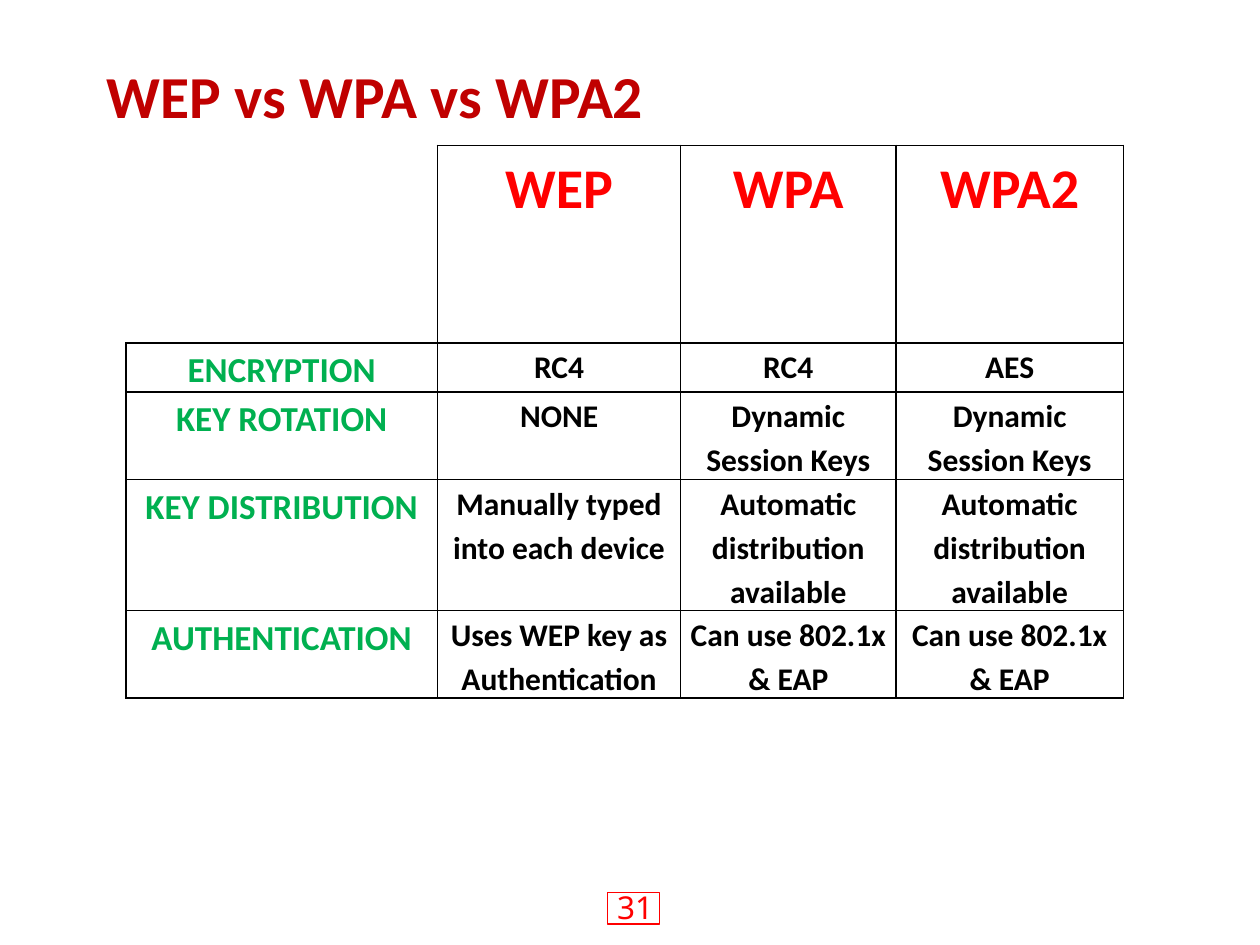
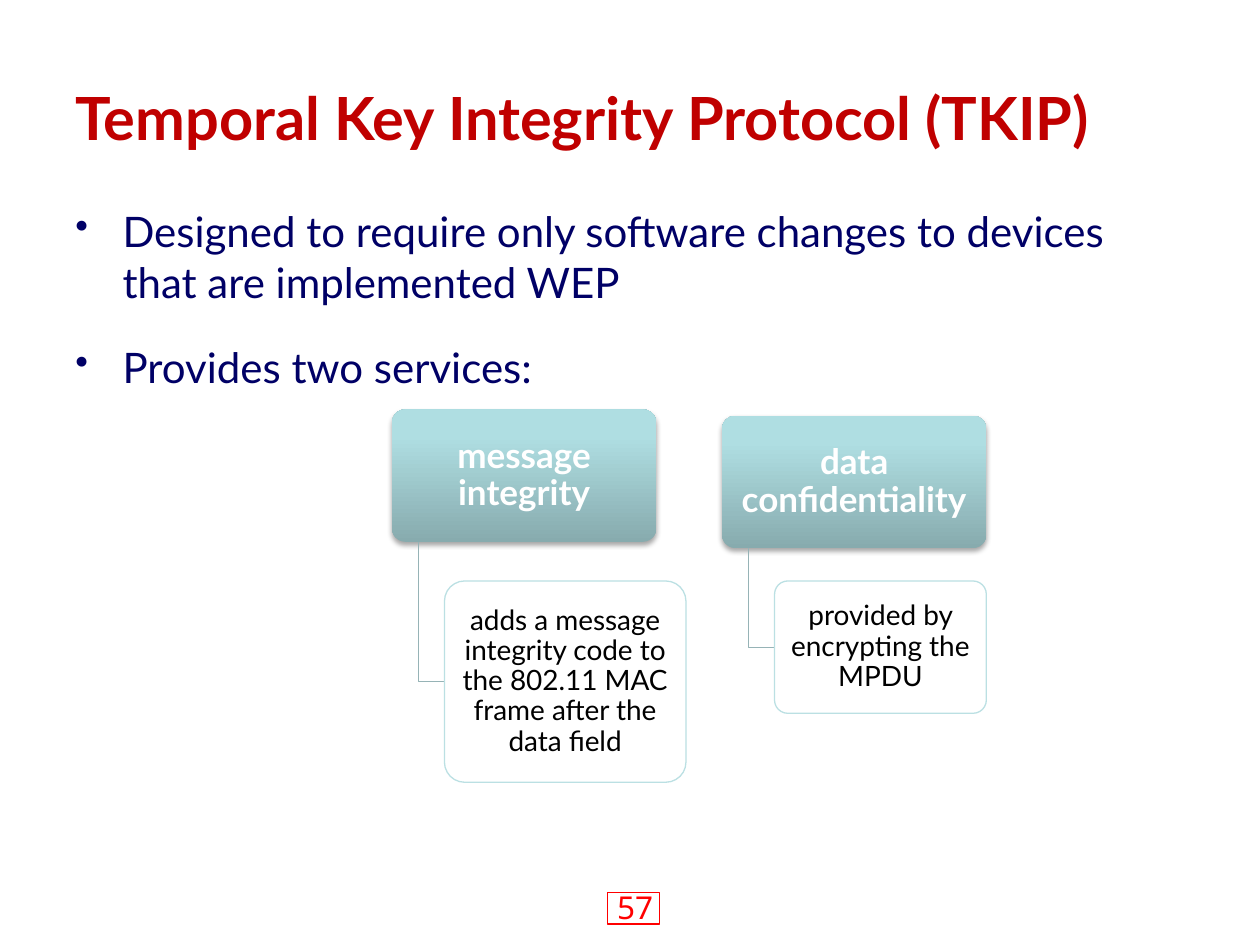
import pptx
import pptx.util
import pptx.dml.color
import pptx.enum.shapes
import pptx.enum.text
import pptx.oxml
import pptx.oxml.ns

Pt = pptx.util.Pt
RGB = pptx.dml.color.RGBColor
MSO_SHAPE = pptx.enum.shapes.MSO_SHAPE
CENTER = pptx.enum.text.PP_ALIGN.CENTER
TOP = pptx.enum.text.MSO_ANCHOR.TOP
MIDDLE = pptx.enum.text.MSO_ANCHOR.MIDDLE
NS = pptx.oxml.ns.nsdecls("a")

TITLE_RED = RGB(0xC0, 0x00, 0x00)
RED = RGB(0xFF, 0x00, 0x00)
GREEN = RGB(0x00, 0xB0, 0x50)
NAVY = RGB(0x00, 0x00, 0x66)
BLACK = RGB(0x00, 0x00, 0x00)
WHITE = RGB(0xFF, 0xFF, 0xFF)
TEAL_LINE = RGB(0xBB, 0xE0, 0xE3)
ELBOW_LINE = RGB(0x96, 0xB3, 0xB6)
TEAL_STOPS = [(0, RGB(0x87, 0xAB, 0xAE)), (80, RGB(0xAF, 0xDE, 0xE2)),
              (100, RGB(0xAF, 0xE0, 0xE4))]

COMPARISON = {
    "title": "WEP vs WPA vs WPA2",
    "page": "31",
    "rows": [
        ("", "WEP", "WPA", "WPA2"),
        ("ENCRYPTION", "RC4", "RC4", "AES"),
        ("KEY ROTATION", "NONE", "Dynamic Session Keys", "Dynamic Session Keys"),
        ("KEY DISTRIBUTION", "Manually typed into each device",
         "Automatic distribution available", "Automatic distribution available"),
        ("AUTHENTICATION", "Uses WEP key as Authentication",
         "Can use 802.1x & EAP", "Can use 802.1x & EAP"),
    ],
    "col_widths": [178, 139, 123, 130],
    "row_heights": [113, 28, 50, 75, 50],
}
TKIP = {
    "title": "Temporal Key Integrity Protocol (TKIP)",
    "page": "57",
    "bullets": [
        "Designed to require only software changes to devices that are implemented WEP",
        "Provides two services:",
    ],
    # name, left, top, detail, detail width, detail height
    "services": [
        ("message integrity", 224, 234,
         "adds a message integrity code to the 802.11 MAC frame after the data field",
         138, 115),
        ("data confidentiality", 412.6, 237.6,
         "provided by encrypting the MPDU", 121, 75.6),
    ],
}
SERVICE_W, SERVICE_H = 151, 75.6
DETAIL_TOP, DETAIL_INDENT = 332, 30


def add_run(p, text, font, size, color, bold=False):
    r = p.add_run()
    r.text = text
    r.font.name, r.font.size, r.font.bold = font, Pt(size), bold
    r.font.color.rgb = color


def set_frame(tf, anchor, inset_x=7.2, inset_y=3.6):
    tf.word_wrap = True
    tf.vertical_anchor = anchor
    tf.margin_left = tf.margin_right = Pt(inset_x)
    tf.margin_top = tf.margin_bottom = Pt(inset_y)


def add_textbox(s, box, anchor):
    tf = s.shapes.add_textbox(*map(Pt, box)).text_frame
    set_frame(tf, anchor)
    return tf


def add_box(s, kind, box, line=None):
    sp = s.shapes.add_shape(kind, *map(Pt, box))
    sp.shadow.inherit = False
    sp.fill.background()
    if line is None:
        sp.line.fill.background()
    else:
        sp.line.color.rgb, sp.line.width = line, Pt(0.75)
    return sp


def add_base_slide(prs, content, title_box, title_font):
    """Blank slide with the shared page number and title."""
    s = prs.slides.add_slide(prs.slide_layouts[6])
    p = add_textbox(s, (330, 504, 66, 29), TOP).paragraphs[0]
    p.alignment = CENTER
    add_run(p, content["page"], "Noto Sans", 18, RED)
    add_box(s, MSO_SHAPE.RECTANGLE, (347, 510, 30, 18), RED)
    tf = add_textbox(s, title_box, MIDDLE)
    add_run(tf.paragraphs[0], content["title"], title_font, 34, TITLE_RED, True)
    return s


def set_borders(cell, sides):
    tcPr = cell._tc.get_or_add_tcPr()
    for side in "LRTB":
        paint = ('<a:solidFill><a:srgbClr val="000000"/></a:solidFill>'
                 if side in sides else "<a:noFill/>")
        tcPr.append(pptx.oxml.parse_xml(
            f'<a:ln{side} {NS} w="12700">{paint}</a:ln{side}>'))


def add_comparison_table(s, content):
    rows, widths, heights = (content[k] for k in ("rows", "col_widths", "row_heights"))
    tbl = s.shapes.add_table(len(rows), len(widths), Pt(72), Pt(83),
                             Pt(sum(widths)), Pt(sum(heights))).table
    tbl.first_row = tbl.horz_banding = False
    for col, width in zip(tbl.columns, widths):
        col.width = Pt(width)
    for i, (row, height) in enumerate(zip(rows, heights)):
        tbl.rows[i].height = Pt(height)
        for j, text in enumerate(row):
            cell = tbl.cell(i, j)
            set_borders(cell, "LRTB" if text else "RB")
            cell.fill.background()
            cell.margin_left = cell.margin_right = Pt(5)
            cell.margin_top = cell.margin_bottom = Pt(0)
            if not text:
                continue
            p = cell.text_frame.paragraphs[0]
            p.alignment, p.line_spacing = CENTER, 1.15
            size, color = (32, RED) if i == 0 else (20, GREEN) if j == 0 else (18, BLACK)
            add_run(p, text, "Calibri", size, color, True)


def add_bullets(s, bullets):
    tf = add_textbox(s, (36, 114, 648, 343), TOP)
    for i, text in enumerate(bullets):
        p = tf.add_paragraph() if i else tf.paragraphs[0]
        pPr = p._p.get_or_add_pPr()
        pPr.set("marL", str(Pt(27)))
        pPr.set("indent", str(-Pt(27)))
        pPr.append(pptx.oxml.parse_xml(f'<a:buSzPct {NS} val="90000"/>'))
        pPr.append(pptx.oxml.parse_xml(f'<a:buChar {NS} char="•"/>'))
        if i:
            p.space_before = Pt(20)
        add_run(p, text, "Lato", 24, NAVY)


def add_card(s, box, text, size, color, bold, insets, line=None):
    sp = add_box(s, MSO_SHAPE.ROUNDED_RECTANGLE, box, line)
    sp.adjustments[0] = 0.1
    set_frame(sp.text_frame, MIDDLE, *insets)
    p = sp.text_frame.paragraphs[0]
    p.alignment, p.line_spacing = CENTER, 0.9
    add_run(p, text, "Lato", size, color, bold)
    return sp


def shade_service(sp):
    """Vertical teal gradient and a soft shadow below."""
    spPr = sp._element.spPr
    stops = "".join(f'<a:gs pos="{pos * 1000}"><a:srgbClr val="{color}"/></a:gs>'
                    for pos, color in TEAL_STOPS)
    spPr.replace(spPr.find(pptx.oxml.ns.qn("a:noFill")), pptx.oxml.parse_xml(
        f'<a:gradFill {NS} rotWithShape="1"><a:gsLst>{stops}</a:gsLst>'
        '<a:lin ang="16200000" scaled="0"/></a:gradFill>'))
    spPr.find(pptx.oxml.ns.qn("a:effectLst")).append(pptx.oxml.parse_xml(
        f'<a:outerShdw {NS} blurRad="{Pt(3.1)}" dist="{Pt(1.8)}" dir="5400000" '
        'rotWithShape="0"><a:srgbClr val="000000"><a:alpha val="35000"/></a:srgbClr>'
        '</a:outerShdw>'))


def add_elbow(s, x, top, bottom, right):
    fb = s.shapes.build_freeform(Pt(x), Pt(top))
    fb.add_line_segments([(Pt(x), Pt(bottom)), (Pt(right), Pt(bottom))], close=False)
    sp = fb.convert_to_shape()
    sp.shadow.inherit = False
    sp.fill.background()
    sp.line.color.rgb, sp.line.width = ELBOW_LINE, Pt(0.75)


def add_service(s, name, left, top, detail, width, height):
    sp = add_card(s, (left, top, SERVICE_W, SERVICE_H), name, 20, WHITE, True, (3, 2))
    shade_service(sp)
    detail_left = left + DETAIL_INDENT
    add_elbow(s, left + DETAIL_INDENT / 2, top + SERVICE_H,
              DETAIL_TOP + height / 2, detail_left)
    sp = add_card(s, (detail_left, DETAIL_TOP, width, height), detail,
                  16, BLACK, False, (2.2, 1.5), TEAL_LINE)
    sp.fill.solid()
    sp.fill.fore_color.rgb = WHITE
    clr = sp._element.spPr.find(pptx.oxml.ns.qn("a:solidFill"))[0]
    clr.append(pptx.oxml.parse_xml(f'<a:alpha {NS} val="90000"/>'))


def main():
    prs = pptx.Presentation()
    prs.slide_width, prs.slide_height = Pt(720), Pt(540)

    s = add_base_slide(prs, COMPARISON, (54, 18, 516, 72), "Calibri")
    add_comparison_table(s, COMPARISON)

    s = add_base_slide(prs, TKIP, (36, 21.6, 648, 90), "Lato")
    add_bullets(s, TKIP["bullets"])
    for service in TKIP["services"]:
        add_service(s, *service)

    prs.save("out.pptx")


if __name__ == "__main__":
    main()
